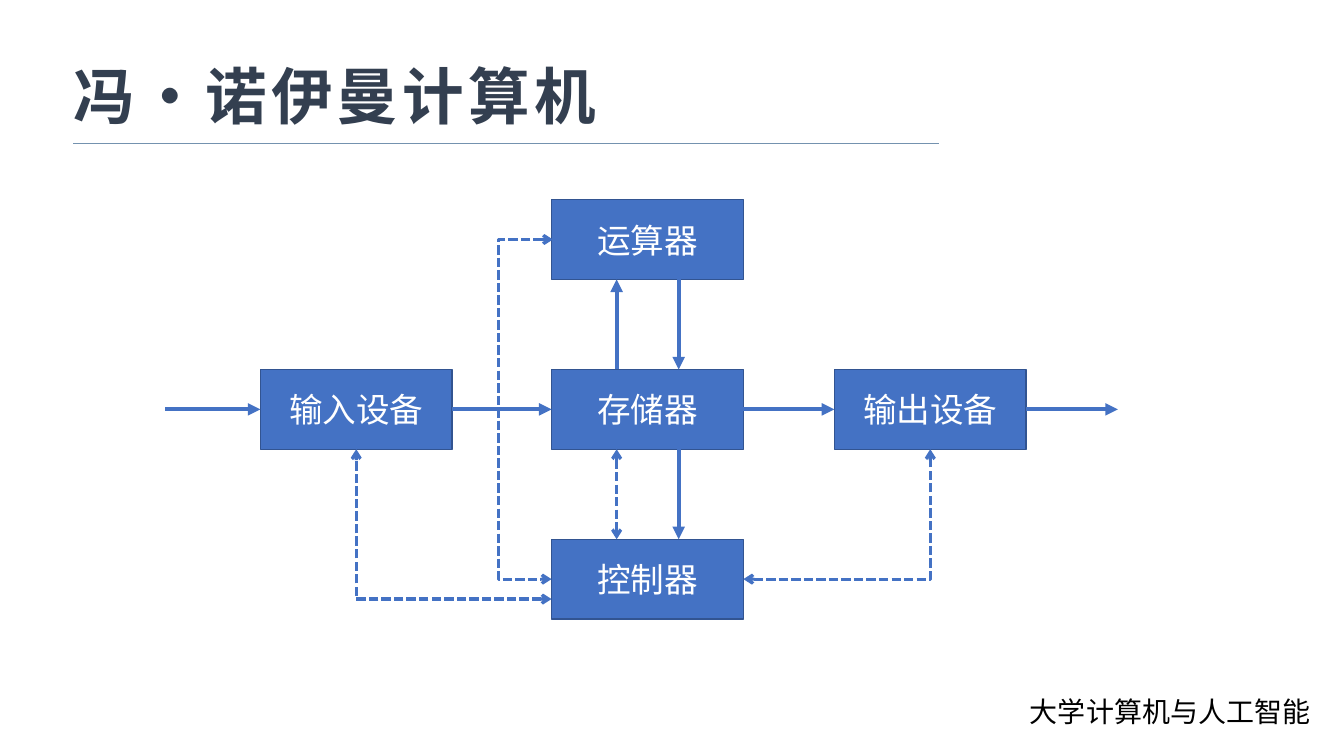
"""Builds a slide with the block diagram of a von Neumann computer."""
from lxml import etree
from pptx import Presentation
from pptx.dml.color import RGBColor
from pptx.enum.dml import MSO_LINE
from pptx.enum.shapes import MSO_CONNECTOR, MSO_SHAPE
from pptx.enum.text import MSO_ANCHOR, MSO_AUTO_SIZE, PP_ALIGN
from pptx.oxml.ns import qn
from pptx.util import Pt

STRAIGHT, ELBOW = MSO_CONNECTOR.STRAIGHT, MSO_CONNECTOR.ELBOW
RECTANGLE = MSO_SHAPE.RECTANGLE
DASH = MSO_LINE.SQUARE_DOT
MIDDLE, TOP = MSO_ANCHOR.MIDDLE, MSO_ANCHOR.TOP
LEFT, CENTER, RIGHT = PP_ALIGN.LEFT, PP_ALIGN.CENTER, PP_ALIGN.RIGHT
GROW = MSO_AUTO_SIZE.SHAPE_TO_FIT_TEXT
FIXED = MSO_AUTO_SIZE.NONE

BLUE = RGBColor(0x44, 0x72, 0xC4)
EDGE = RGBColor(0x32, 0x54, 0x91)
RULE = RGBColor(0x74, 0x92, 0xAF)
SLATE = RGBColor(0x33, 0x3F, 0x50)
WHITE = RGBColor(0xFF, 0xFF, 0xFF)
BLACK = RGBColor(0, 0, 0)

BOX_WIDTH, BOX_HEIGHT = 137, 57
INPUT_LEFT, CORE_LEFT, OUTPUT_LEFT = 186, 394, 596
TOP_ROW, ROW_STEP = 142.6, 121.3
ALU_TOP, MEMORY_TOP, CONTROL_TOP = [TOP_ROW + ROW_STEP * row for row in range(3)]
UP_LANE, DOWN_LANE = 440.5, 484.8


class Diagram:
    """Holds the style and the page, and draws each kind of element."""

    font_name = "Noto Sans CJK SC"

    def __init__(self, page):
        self.page = page

    def set_text(self, shape, text, align, anchor, color, size, bold=False,
                 tracking=0, spacing=1.0, auto_size=FIXED):
        frame = shape.text_frame
        for name, value in {"word_wrap": True, "vertical_anchor": anchor,
                            "auto_size": auto_size}.items():
            setattr(frame, name, value)
        para = frame.paragraphs[0]
        para.alignment = align
        para.line_spacing = spacing
        span = para.add_run()
        span.text = text
        span.font.color.rgb = color
        for name, value in {"name": self.font_name, "size": Pt(size),
                            "bold": bold}.items():
            setattr(span.font, name, value)
        properties = span.font._element
        etree.SubElement(properties, qn("a:ea"), typeface=self.font_name)
        if tracking:
            properties.set("spc", str(tracking * 100))

    def label(self, text, left, top, width, height, **style):
        box = self.page.shapes.add_textbox(Pt(left), Pt(top), Pt(width), Pt(height))
        self.set_text(box, text, **style)

    def unit(self, text, left, top):
        box = self.page.shapes.add_shape(
            RECTANGLE, Pt(left), Pt(top), Pt(BOX_WIDTH), Pt(BOX_HEIGHT))
        box.shadow.inherit = False
        box.fill.solid()
        box.fill.fore_color.rgb = BLUE
        box.line.color.rgb = EDGE
        box.line.width = Pt(1)
        self.set_text(box, text, CENTER, MIDDLE, WHITE, 24)

    def line(self, start, end, color=BLUE, width=3, kind=STRAIGHT,
             dash=None, head=None, tail=None):
        link = self.page.shapes.add_connector(kind, *map(Pt, start + end))
        link.line.color.rgb = color
        for name, value in {"width": Pt(width), "dash_style": dash}.items():
            setattr(link.line, name, value)
        outline = link.line._get_or_add_ln()
        for tag, arrow in (("a:headEnd", head), ("a:tailEnd", tail)):
            if arrow:
                etree.SubElement(outline, qn(tag), type=arrow)
        etree.SubElement(link._element.spPr, qn("a:effectLst"))
        return link

    def flow(self, start, end):
        self.line(start, end, tail="triangle")

    def control(self, start, end, kind=STRAIGHT):
        return self.line(start, end, width=2.25, kind=kind, dash=DASH,
                         head="arrow", tail="arrow")

    def corner(self, start, end):
        link = self.control(start, end, ELBOW)
        link._element.spPr.find(qn("a:prstGeom")).set("prst", "bentConnector2")

    def bracket(self, start, end, reach):
        link = self.control(start, end, ELBOW)
        guides = link._element.spPr.find(qn("a:prstGeom")).get_or_add_avLst()
        ratio = round(reach / abs(start[0] - end[0]) * 100000)
        etree.SubElement(guides, qn("a:gd"), name="adj1", fmla=f"val {ratio}")


def main():
    deck = Presentation()
    deck.slide_width, deck.slide_height = Pt(960), Pt(540)
    page = deck.slides.add_slide(deck.slide_layouts[6])
    diagram = Diagram(page)

    diagram.line((52.5, 102.3), (671, 102.3), color=RULE, width=0.5)
    diagram.label("大学计算机与人工智能", 727.2, 492.5, 216, 31.5, align=RIGHT,
                  anchor=TOP, color=BLACK, size=20, auto_size=GROW)
    diagram.label("冯·诺伊曼计算机", 45.4, 38.2, 862.6, 65.5, align=LEFT,
                  anchor=MIDDLE, color=SLATE, size=44, bold=True, tracking=3,
                  spacing=0.9)

    for text, left, top in (
            ("存储器", CORE_LEFT, MEMORY_TOP),
            ("输入设备", INPUT_LEFT, MEMORY_TOP),
            ("输出设备", OUTPUT_LEFT, MEMORY_TOP),
            ("控制器", CORE_LEFT, CONTROL_TOP),
            ("运算器", CORE_LEFT, ALU_TOP)):
        diagram.unit(text, left, top)

    alu_middle, memory_middle, control_middle = [
        top + BOX_HEIGHT / 2 for top in (ALU_TOP, MEMORY_TOP, CONTROL_TOP)]
    alu_bottom, memory_bottom = ALU_TOP + BOX_HEIGHT, MEMORY_TOP + BOX_HEIGHT
    core_right = CORE_LEFT + BOX_WIDTH

    for start, end in (
            (118, INPUT_LEFT),
            (INPUT_LEFT + BOX_WIDTH, CORE_LEFT),
            (core_right, OUTPUT_LEFT),
            (OUTPUT_LEFT + BOX_WIDTH, 798.5)):
        diagram.flow((start, memory_middle), (end, memory_middle))
    diagram.flow((DOWN_LANE, alu_bottom), (DOWN_LANE, MEMORY_TOP))
    diagram.flow((UP_LANE, MEMORY_TOP), (UP_LANE, alu_bottom))
    diagram.flow((DOWN_LANE, memory_bottom), (DOWN_LANE, CONTROL_TOP))

    diagram.control((UP_LANE, memory_bottom), (UP_LANE, CONTROL_TOP))
    diagram.corner((CORE_LEFT, control_middle + BOX_HEIGHT / 4),
                   (INPUT_LEFT + BOX_WIDTH / 2, memory_bottom))
    diagram.corner((core_right, control_middle),
                   (OUTPUT_LEFT + BOX_WIDTH / 2, memory_bottom))
    diagram.bracket((CORE_LEFT + 1, alu_middle), (CORE_LEFT, control_middle),
                    reach=39.4)

    deck.save("out.pptx")


if __name__ == "__main__":
    main()
